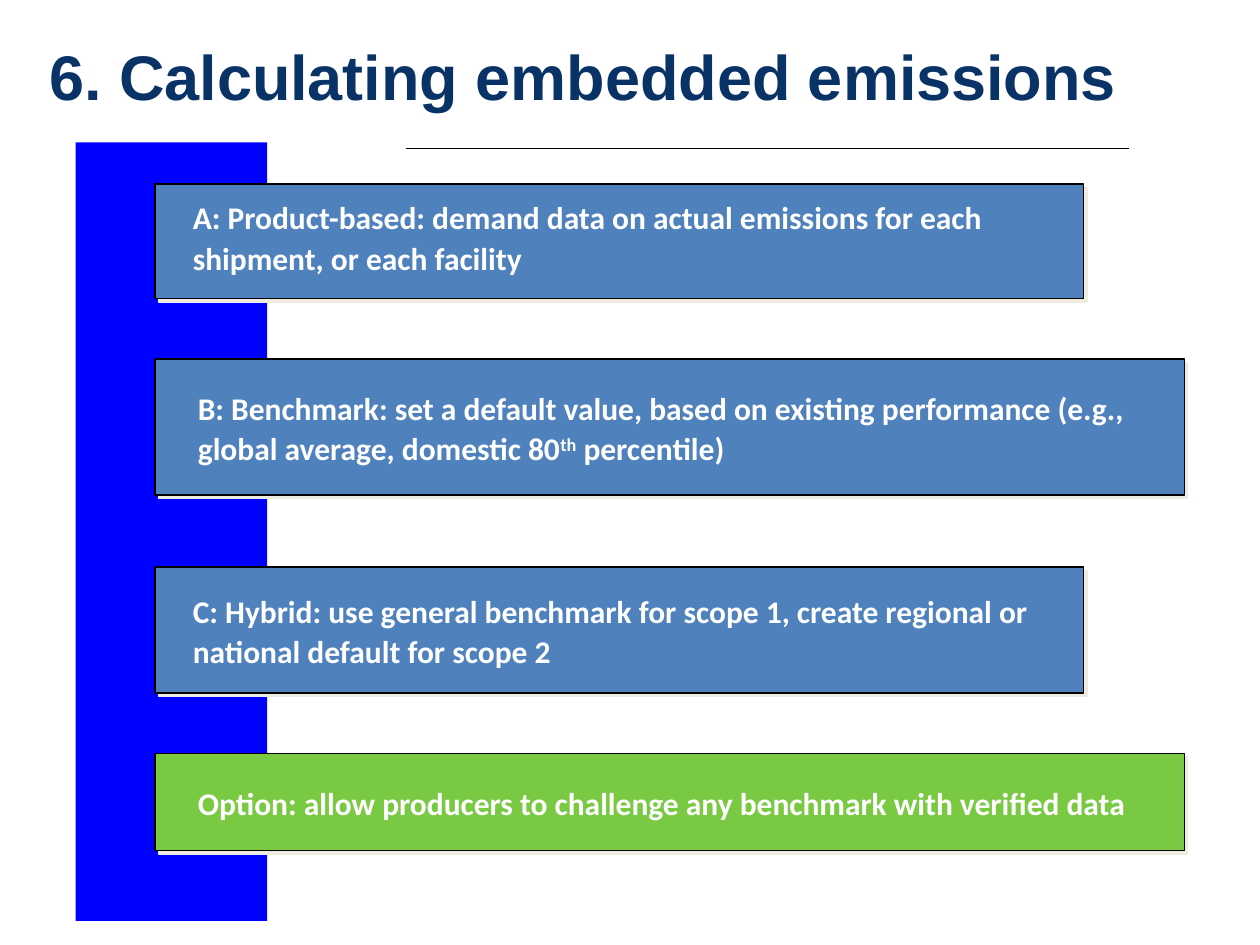
from dataclasses import dataclass

from lxml import etree
from pptx import Presentation
from pptx.dml.color import RGBColor
from pptx.enum.shapes import MSO_CONNECTOR, MSO_SHAPE
from pptx.enum.text import MSO_ANCHOR, MSO_AUTO_SIZE, PP_ALIGN
from pptx.oxml.ns import qn
from pptx.util import Inches, Pt

RECT = MSO_SHAPE.RECTANGLE
STRAIGHT = MSO_CONNECTOR.STRAIGHT
MIDDLE = MSO_ANCHOR.MIDDLE
NO_FIT = MSO_AUTO_SIZE.NONE
LEFT = PP_ALIGN.LEFT


@dataclass(frozen=True)
class Theme:
    navy: str = "093266"
    band: str = "0000FF"
    blue: str = "4F81BD"
    green: str = "79C943"
    white: str = "FFFFFF"
    black: str = "000000"
    shade: str = "EEECE1"
    head: str = "Arial"
    body: str = "Calibri"
    title: int = 36
    text: int = 18
    line: float = 0.75


THEME = Theme()
CARD_LEFT = 1.23
# Card width, then text left and text width
SHORT = (7.37, 1.53, 6.75)
LONG = (8.17, 1.57, 7.49)

# Top, height, layout, fill, text top, text height, text runs (raised when odd)
CARDS = [
    (1.46, 0.91, SHORT, THEME.blue, 1.46, 0.83,
     ["A: Product-based: demand data on actual emissions for each "
      "shipment, or each facility"]),
    (2.85, 1.08, LONG, THEME.blue, 2.89, 0.99,
     ["B: Benchmark: set a default value, based on existing performance "
      "(e.g., global average, domestic 80", "th", " percentile)"]),
    (4.5, 1, SHORT, THEME.blue, 4.54, 0.91,
     ["C: Hybrid: use general benchmark for scope 1, create regional or "
      "national default for scope 2"]),
    (5.98, 0.77, LONG, THEME.green, 6.01, 0.71,
     ["Option: allow producers to challenge any benchmark with "
      "verified data"]),
]


def rgb(code):
    return RGBColor.from_string(code)


def style(font, name, size, color):
    font.name, font.size, font.bold = name, Pt(size), True
    font.color.rgb = rgb(color)


def add_title(slide, text):
    title = slide.shapes.title
    title.left, title.top = Inches(0.29), Inches(0.44)
    title.width, title.height = Inches(9.43), Inches(0.32)
    frame = title.text_frame
    frame.text = text
    frame.auto_size = NO_FIT
    frame.word_wrap = True
    frame.vertical_anchor = MIDDLE
    para = frame.paragraphs[0]
    para.alignment = LEFT
    style(para.runs[0].font, THEME.head, THEME.title, THEME.navy)


def add_rect(shapes, box, fill):
    rect = shapes.add_shape(RECT, *map(Inches, box))
    rect.shadow.inherit = False
    rect.fill.solid()
    rect.fill.fore_color.rgb = rgb(fill)
    rect.line.fill.background()
    return rect


def add_rule(shapes, left, right, top):
    rule = shapes.add_connector(
        STRAIGHT, Inches(left), Inches(top), Inches(right), Inches(top))
    rule.line.color.rgb = rgb(THEME.black)
    rule.line.width = Pt(THEME.line)
    etree.SubElement(rule._element.spPr, qn("a:effectLst"))


def cast_shadow(shape):
    effects = shape._element.spPr.find(qn("a:effectLst"))
    shadow = etree.SubElement(
        effects, qn("a:outerShdw"), dist=str(Pt(2.8)), dir="2700000",
        algn="ctr", rotWithShape="0")
    etree.SubElement(shadow, qn("a:srgbClr"), val=THEME.shade)


def add_text(shapes, box, parts):
    """Add a text box in which every second part is superscript."""
    frame = shapes.add_textbox(*map(Inches, box)).text_frame
    frame.word_wrap = True
    frame.vertical_anchor = MIDDLE
    frame.margin_left = frame.margin_right = 0
    frame.margin_top = frame.margin_bottom = 0
    para = frame.paragraphs[0]
    para.alignment = LEFT
    para.line_spacing = 1.07
    para.space_after = Pt(8)
    for i, part in enumerate(parts):
        run = para.add_run()
        run.text = part
        style(run.font, THEME.body, THEME.text, THEME.white)
        if i % 2:
            run.font._element.set("baseline", "30000")


def add_card(slide, top, height, layout, fill, text_top, text_height, parts):
    width, text_left, text_width = layout
    shapes = slide.shapes.add_group_shape().shapes
    rect = add_rect(shapes, (CARD_LEFT, top, width, height), fill)
    rect.line.color.rgb = rgb(THEME.black)
    rect.line.width = Pt(THEME.line)
    cast_shadow(rect)
    add_text(shapes, (text_left, text_top, text_width, text_height), parts)


def main():
    deck = Presentation()
    deck.slide_width, deck.slide_height = Inches(10), Inches(7.5)
    slide = deck.slides.add_slide(deck.slide_layouts[5])
    add_title(slide, "6. Calculating embedded emissions")
    add_rect(slide.shapes, (0.6, 1.13, 1.52, 6.18), THEME.band)
    add_rule(slide.shapes, 3.22, 8.96, 1.18)
    for card in CARDS:
        add_card(slide, *card)
    deck.save("out.pptx")


if __name__ == "__main__":
    main()
